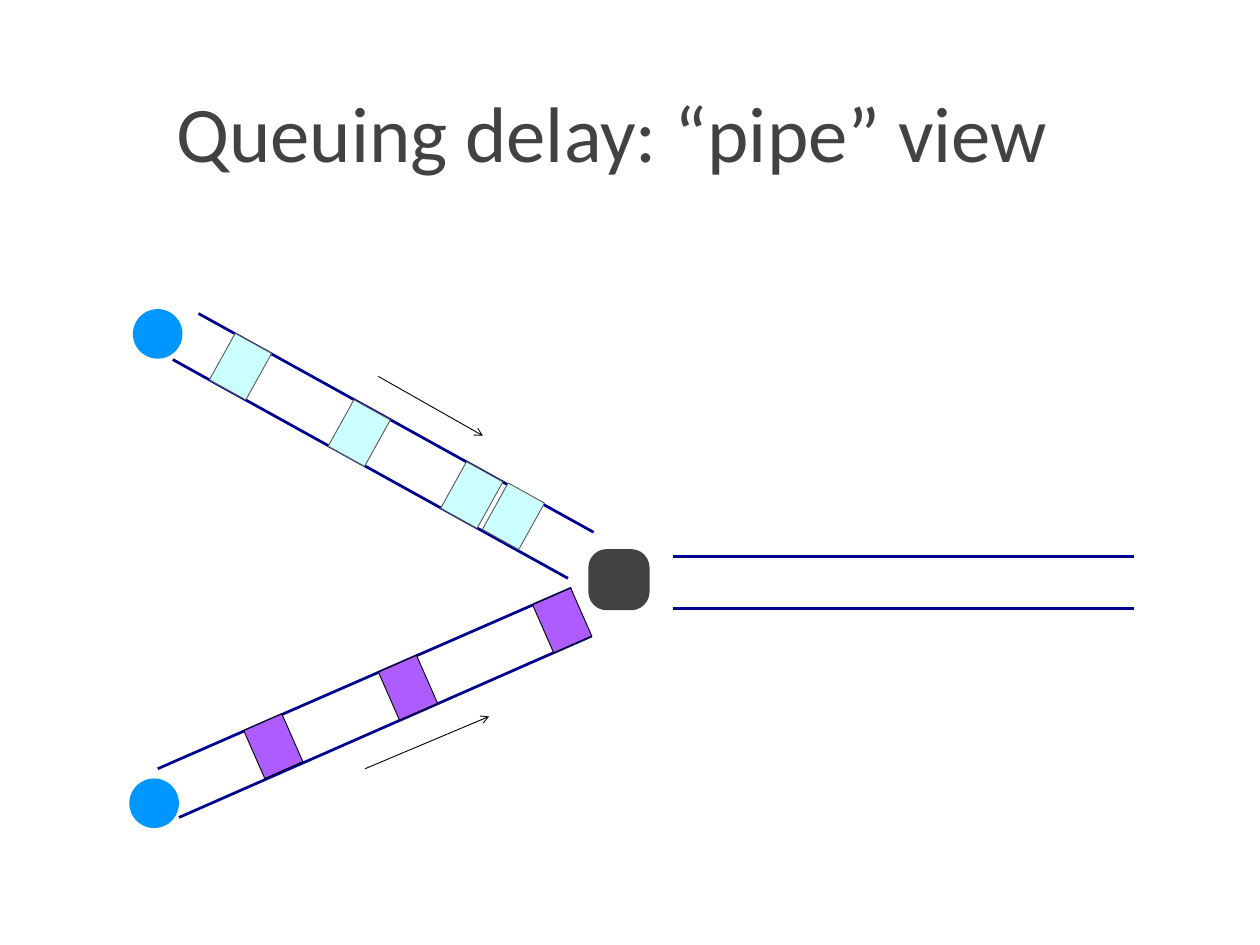
import pptx
import pptx.dml.color
import pptx.enum.shapes
import pptx.enum.text
import pptx.oxml.ns
import pptx.util
from lxml import etree
from pptx.util import Inches

SHAPES = pptx.enum.shapes.MSO_SHAPE

PIPE_BLUE = "000090"
HOST_BLUE = "0096FF"
DARK_GRAY = "424242"
BLACK = "000000"

# Pipe edges as start x, start y, end x, end y
PIPE_EDGES = [
    (2.24, 3.54, 6.7, 6.01),
    (1.95, 4.06, 6.41, 6.53),
    (1.78, 8.68, 6.45, 6.64),
    (2.02, 9.23, 6.68, 7.18),
    (7.59, 6.28, 12.8, 6.28),
    (7.59, 6.87, 12.8, 6.87),
]
FLOW_ARROWS = [(4.27, 4.25, 5.45, 4.92), (4.12, 8.68, 5.52, 8.09)]

# Packets as left, top
UPPER_PACKETS = [(5.56, 5.53), (5.09, 5.29), (3.82, 4.59), (2.48, 3.84)]
LOWER_PACKETS = [(2.85, 8.13), (6.11, 6.71), (4.37, 7.47)]
HOSTS = [(1.5, 3.49), (1.46, 8.79)]


def rgb(color):
    return pptx.dml.color.RGBColor.from_string(color)


def add_line(slide, ends, color, width, arrow=False):
    line = slide.shapes.add_connector(
        pptx.enum.shapes.MSO_CONNECTOR.STRAIGHT, *map(Inches, ends)
    )
    line.line.color.rgb = rgb(color)
    line.line.width = pptx.util.Pt(width)
    if arrow:
        outline = line.line._get_or_add_ln()
        etree.SubElement(outline, pptx.oxml.ns.qn("a:tailEnd"), type="arrow")
    etree.SubElement(line._element.spPr, pptx.oxml.ns.qn("a:effectLst"))


def add_block(slide, kind, box, fill, outline=None, rotation=0):
    shape = slide.shapes.add_shape(kind, *map(Inches, box))
    shape.shadow.inherit = False
    shape.rotation = rotation
    shape.fill.solid()
    shape.fill.fore_color.rgb = rgb(fill)
    if outline:
        shape.line.color.rgb = rgb(outline)
        shape.line.width = pptx.util.Pt(0.75)
    else:
        shape.line.fill.background()
    return shape


def add_packets(slide, corners, height, fill, outline, rotation):
    for left, top in corners:
        box = (left, top, 0.47, height)
        add_block(slide, SHAPES.RECTANGLE, box, fill, outline, rotation)


def add_title(slide, text):
    box = slide.shapes.add_textbox(*map(Inches, (0.6, 0.35, 12.61, 1.73)))
    frame = box.text_frame
    frame.word_wrap = True
    frame.vertical_anchor = pptx.enum.text.MSO_ANCHOR.BOTTOM
    frame.margin_left = frame.margin_right = Inches(0.14)
    frame.margin_top = frame.margin_bottom = Inches(0.07)
    paragraph = frame.paragraphs[0]
    paragraph.alignment = pptx.enum.text.PP_ALIGN.CENTER
    run = paragraph.add_run()
    run.text = text
    run.font.name = "Calibri"
    run.font.size = pptx.util.Pt(64)
    run.font.color.rgb = rgb(DARK_GRAY)


def main():
    presentation = pptx.Presentation()
    presentation.slide_width = Inches(14.22)
    presentation.slide_height = Inches(10.67)
    slide = presentation.slides.add_slide(presentation.slide_layouts[6])

    # Pipes with the packets in them
    for edge in PIPE_EDGES:
        add_line(slide, edge, PIPE_BLUE, 2.25)
    add_packets(slide, UPPER_PACKETS, 0.6, "CCFFFF", "595959", 29)
    add_packets(slide, LOWER_PACKETS, 0.59, "AD5CFF", BLACK, 336.3)

    add_title(slide, "Queuing delay: “pipe” view")

    # Sending hosts and the switch
    for left, top in HOSTS:
        add_block(slide, SHAPES.OVAL, (left, top, 0.56, 0.56), HOST_BLUE)
    switch = add_block(
        slide, SHAPES.ROUNDED_RECTANGLE, (6.64, 6.2, 0.69, 0.69), DARK_GRAY
    )
    switch.adjustments[0] = 0.3

    # Direction of flow
    for arrow in FLOW_ARROWS:
        add_line(slide, arrow, BLACK, 0.75, arrow=True)

    presentation.save("out.pptx")


if __name__ == "__main__":
    main()
